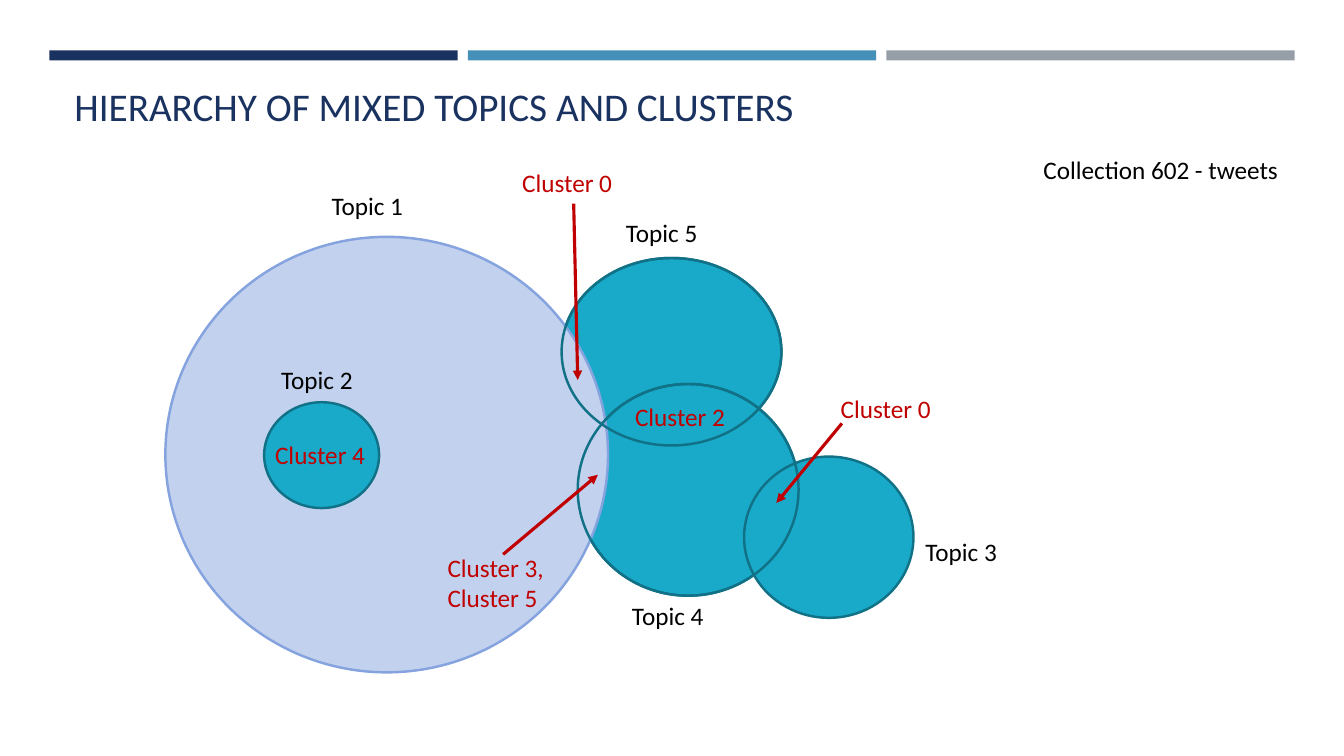
from lxml import etree
from pptx import Presentation
from pptx import util as u
from pptx.dml.color import RGBColor
from pptx.enum import shapes, text
from pptx.oxml.ns import qn

COLORS = {
    "navy": "1A3260", "blue": "4590B8", "gray": "969FA7",
    "teal": "19AAC9", "teal_edge": "117186",
    "pale": "C2D1EE", "pale_edge": "85A3DE",
    "topic": "000000", "cluster": "C00000",
}


class SlideBuilder:
    def __init__(self, slide, font="Calibri"):
        self.slide = slide
        self.font = font

    def color(self, name):
        return RGBColor.from_string(COLORS[name])

    def shape(self, kind, box, fill=None, edge=None):
        sp = self.slide.shapes.add_shape(kind, *map(u.Inches, box))
        sp.shadow.inherit = False
        if fill:
            sp.fill.solid()
            sp.fill.fore_color.rgb = self.color(fill)
        else:
            sp.fill.background()
        if edge:
            sp.line.color.rgb = self.color(edge)
            sp.line.width = u.Pt(1.75)
        else:
            sp.line.fill.background()

    def bar(self, left, fill):
        self.shape(shapes.MSO_SHAPE.RECTANGLE, (left, 0.5, 4.05, 0.1), fill)

    def circle(self, box, fill=None, edge="teal_edge"):
        self.shape(shapes.MSO_SHAPE.OVAL, box, fill, edge)

    def label(self, words, left, top, color, width=1.22, height=0.4, size=18):
        sp = self.slide.shapes.add_textbox(*map(u.Inches, (left, top, width, height)))
        tf = sp.text_frame
        tf.word_wrap = True
        tf.vertical_anchor = text.MSO_ANCHOR.TOP
        tf.text = words
        for p in tf.paragraphs:
            for r in p.runs:
                r.font.name = self.font
                r.font.size = u.Pt(size)
                r.font.color.rgb = self.color(color)

    def arrow(self, start, end):
        line = self.slide.shapes.add_connector(
            shapes.MSO_CONNECTOR.STRAIGHT, *map(u.Inches, start + end))
        line.line.color.rgb = self.color("cluster")
        line.line.width = u.Pt(2.25)
        etree.SubElement(line.line._get_or_add_ln(), qn("a:tailEnd"), type="triangle")
        etree.SubElement(line._element.spPr, qn("a:effectLst"))


def main():
    prs = Presentation()
    prs.slide_width, prs.slide_height = u.Inches(13.33), u.Inches(7.5)
    s = SlideBuilder(prs.slides.add_slide(prs.slide_layouts[6]))

    for i, fill in enumerate(("navy", "blue", "gray")):
        s.bar(0.49 + 4.15 * i, fill)
    s.label("HIERARCHY OF MIXED TOPICS AND CLUSTERS", 0.64, 0.77, "navy",
            width=12.06, height=1.11, size=28)
    s.label("Collection 602 - tweets", 10.25, 1.48, "topic", width=2.85)

    topic_5 = (5.57, 2.56, 2.18, 1.86)
    topic_4 = (5.73, 3.81, 2.19, 2.1)
    topic_3 = (7.38, 4.53, 1.68, 1.6)
    for box in (topic_5, topic_4, topic_3):
        s.circle(box, "teal")
    s.circle((1.64, 2.35, 4.39, 4.32), "pale", "pale_edge")
    # Outlines on top keep the overlaps visible
    for box in (topic_5, topic_4):
        s.circle(box)
    s.circle((2.62, 3.99, 1.14, 1.05), "teal")

    for number, left, top in ((1, 3.19, 1.84), (2, 2.69, 3.57), (3, 9.08, 5.27),
                              (4, 6.17, 5.91), (5, 6.11, 2.11)):
        s.label(f"Topic {number}", left, top, "topic", width=1.17)

    for words, left, top, height in (
            ("Cluster 0", 5.08, 1.61, 0.4),
            ("Cluster 0", 8.24, 3.85, 0.4),
            ("Cluster 2", 6.2, 3.93, 0.4),
            ("Cluster 4", 2.63, 4.31, 0.4),
            ("Cluster 3,\nCluster 5", 4.34, 5.43, 0.71)):
        s.label(words, left, top, "cluster", height=height)

    for start, end in (((4.99, 5.5), (5.93, 4.71)),
                       ((8.35, 4.2), (7.7, 4.99)),
                       ((5.69, 2.02), (5.73, 3.77))):
        s.arrow(start, end)

    prs.save("out.pptx")


if __name__ == "__main__":
    main()
